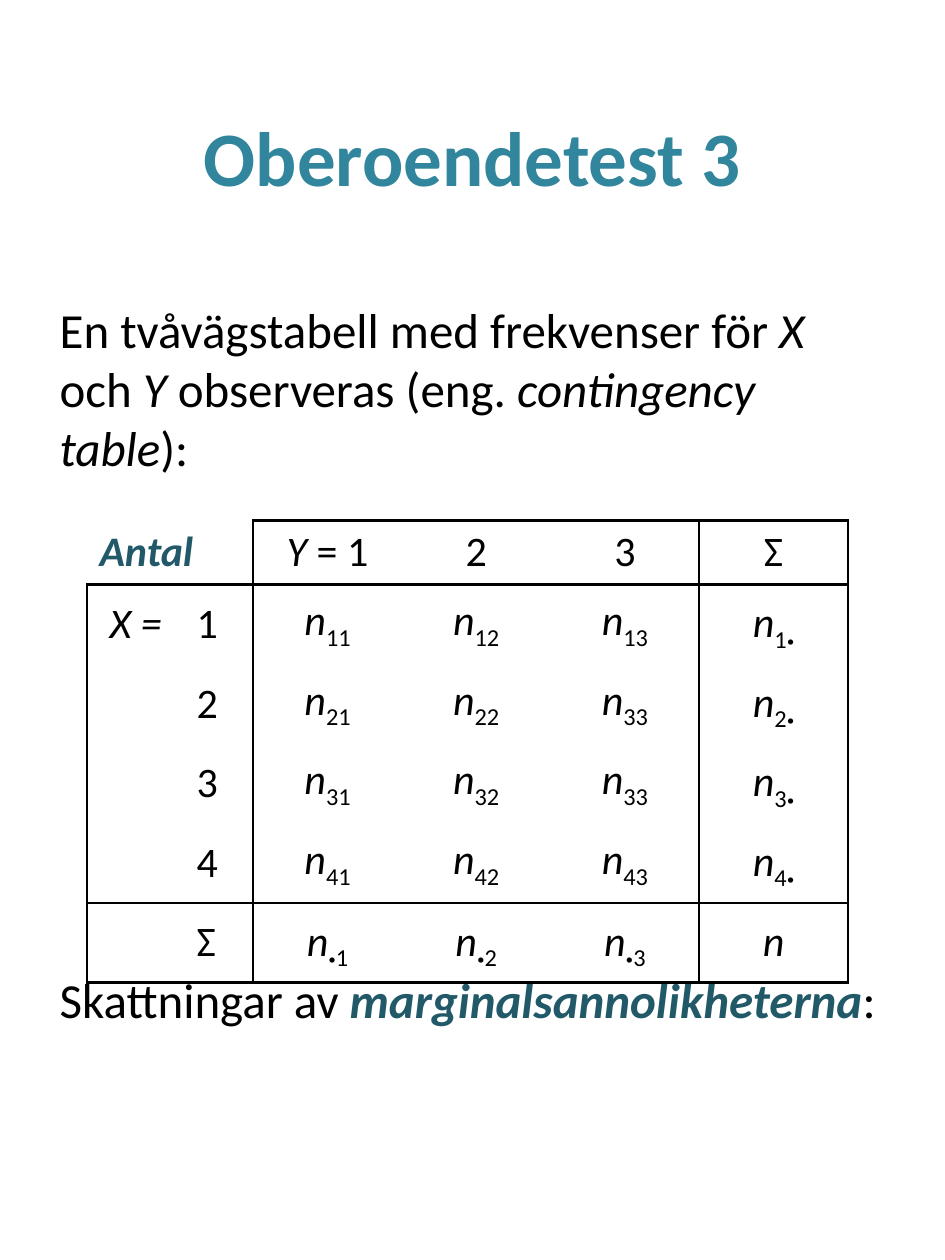
from lxml import etree
from pptx import Presentation, util as u
from pptx.dml.color import RGBColor
from pptx.enum import text
from pptx.oxml import ns

WIDTH, HEIGHT = 7.5, 10
MARGIN = 0.05 * WIDTH
FONT = "Calibri"
BLACK, TEAL, DARK_TEAL = "000000", "31859C", "215968"
COLS = [0.77, 0.55] + [1.18] * 4
ROWS = [0.51] + [0.63] * 5
LAST_ROW, LAST_COL = len(ROWS) - 1, len(COLS) - 1
SIDES = {"L": (0, -1), "R": (0, 1), "T": (-1, 0), "B": (1, 0)}
LEFT, CENTER, RIGHT = (text.PP_ALIGN.LEFT, text.PP_ALIGN.CENTER,
                       text.PP_ALIGN.RIGHT)


def rgb(value):
    return RGBColor.from_string(value)


def add_run(p, words, size, style="", color=BLACK):
    """Add a run; style holds any of b (bold), i (italic), s (subscript)."""
    r = p.add_run()
    r.text = words
    r.font.name, r.font.size = FONT, u.Pt(size)
    r.font.bold, r.font.italic = "b" in style, "i" in style
    r.font.color.rgb = rgb(color)
    if "s" in style:
        r.font._element.set("baseline", "-25000")


def add_runs(p, runs, size):
    for words, *look in runs:
        add_run(p, words, size, *look)


def add_text_box(s, top, height):
    box = s.shapes.add_textbox(u.Inches(MARGIN), u.Inches(top),
                               u.Inches(WIDTH - 2 * MARGIN), u.Inches(height))
    box.text_frame.word_wrap = True
    return box.text_frame


def add_title(s):
    tf = add_text_box(s, 0.04 * HEIGHT, 1.67)
    tf.vertical_anchor = text.MSO_ANCHOR.MIDDLE
    p = tf.paragraphs[0]
    p.alignment = CENTER
    add_run(p, "Oberoendetest 3", 44, "b", TEAL)


def add_body(s):
    tf = add_text_box(s, 2.33, 7.16)
    p = tf.paragraphs[0]
    p.space_before = u.Pt(7.6)
    add_runs(p, [("En tvåvägstabell med frekvenser för ",), ("X", "i"),
                 (" och ",), ("Y", "i"), (" observeras (eng. ",),
                 ("contingency table", "i"), ("):",)], 28)
    p = tf.add_paragraph()
    p.space_before = u.Pt(282)  # leaves room for the table
    add_runs(p, [("Skattningar av ",),
                 ("marginalsannolikheterna", "bi", DARK_TEAL), (":",)], 28)


def region(row, col):
    """Block of the table a cell belongs to; outside counts as the corner."""
    if not (0 <= row <= LAST_ROW and 0 <= col <= LAST_COL):
        return 0, 0
    return (row > 0) + (row == LAST_ROW), (col > 1) + (col == LAST_COL)


def add_borders(cell, row, col):
    """Draw a line on each side where the block changes."""
    tcPr = cell._tc.get_or_add_tcPr()
    for side, (down, across) in SIDES.items():
        if side == "R" and cell.is_merge_origin:
            across = cell.span_width
        ln = etree.SubElement(tcPr, ns.qn(f"a:ln{side}"), w=str(u.Pt(1.5)))
        if region(row, col) == region(row + down, col + across):
            etree.SubElement(ln, ns.qn("a:noFill"))
        else:
            fill = etree.SubElement(ln, ns.qn("a:solidFill"))
            etree.SubElement(fill, ns.qn("a:srgbClr"), val=BLACK)


def fill_cell(cell, runs, alignment=CENTER):
    cell.vertical_anchor = text.MSO_ANCHOR.MIDDLE
    p = cell.text_frame.paragraphs[0]
    p.alignment = alignment
    add_runs(p, [run for run in runs], 24)


def add_count(cell, index):
    """Write n with its index; a dot in the index is larger and bold."""
    fill_cell(cell, [("n", "i")])
    p = cell.text_frame.paragraphs[0]
    for part in index.replace("·", " · ").split():
        if part == "·":
            add_run(p, part, 28, "bs")
        else:
            add_run(p, part, 24, "s")


def add_frequency_table(s):
    frame = s.shapes.add_table(len(ROWS), len(COLS), u.Inches(0.69),
                               u.Inches(4.13), u.Inches(sum(COLS)),
                               u.Inches(sum(ROWS)))
    table = frame.table
    table.first_row = table.horz_banding = False
    for column, width in zip(table.columns, COLS):
        column.width = u.Inches(width)
    for row, height in zip(table.rows, ROWS):
        row.height = u.Inches(height)
    table.cell(0, 0).merge(table.cell(0, 1))

    fill_cell(table.cell(0, 0), [("Antal", "bi", DARK_TEAL)], LEFT)
    fill_cell(table.cell(0, 2), [("Y", "i"), (" = 1",)])
    for col, label in enumerate("23Σ", 3):
        fill_cell(table.cell(0, col), [(label,)])
    fill_cell(table.cell(1, 0), [("X = ", "i")], RIGHT)
    for row, label in enumerate("1234Σ", 1):
        fill_cell(table.cell(row, 1), [(label,)], LEFT)

    counts = ["11 12 13 1·", "21 22 33 2·", "31 32 33 3·", "41 42 43 4·",
              "·1 ·2 ·3"]
    for row, indices in enumerate(counts, 1):
        for col, index in enumerate(indices.split(), 2):
            add_count(table.cell(row, col), index)
    add_count(table.cell(LAST_ROW, LAST_COL), "")

    for row in range(len(ROWS)):
        for col in range(len(COLS)):
            cell = table.cell(row, col)
            add_borders(cell, row, col)
            cell.fill.background()


def main():
    prs = Presentation()
    prs.slide_width, prs.slide_height = u.Inches(WIDTH), u.Inches(HEIGHT)
    s = prs.slides.add_slide(prs.slide_layouts[6])
    add_title(s)
    add_body(s)
    add_frequency_table(s)
    prs.save("out.pptx")


if __name__ == "__main__":
    main()
